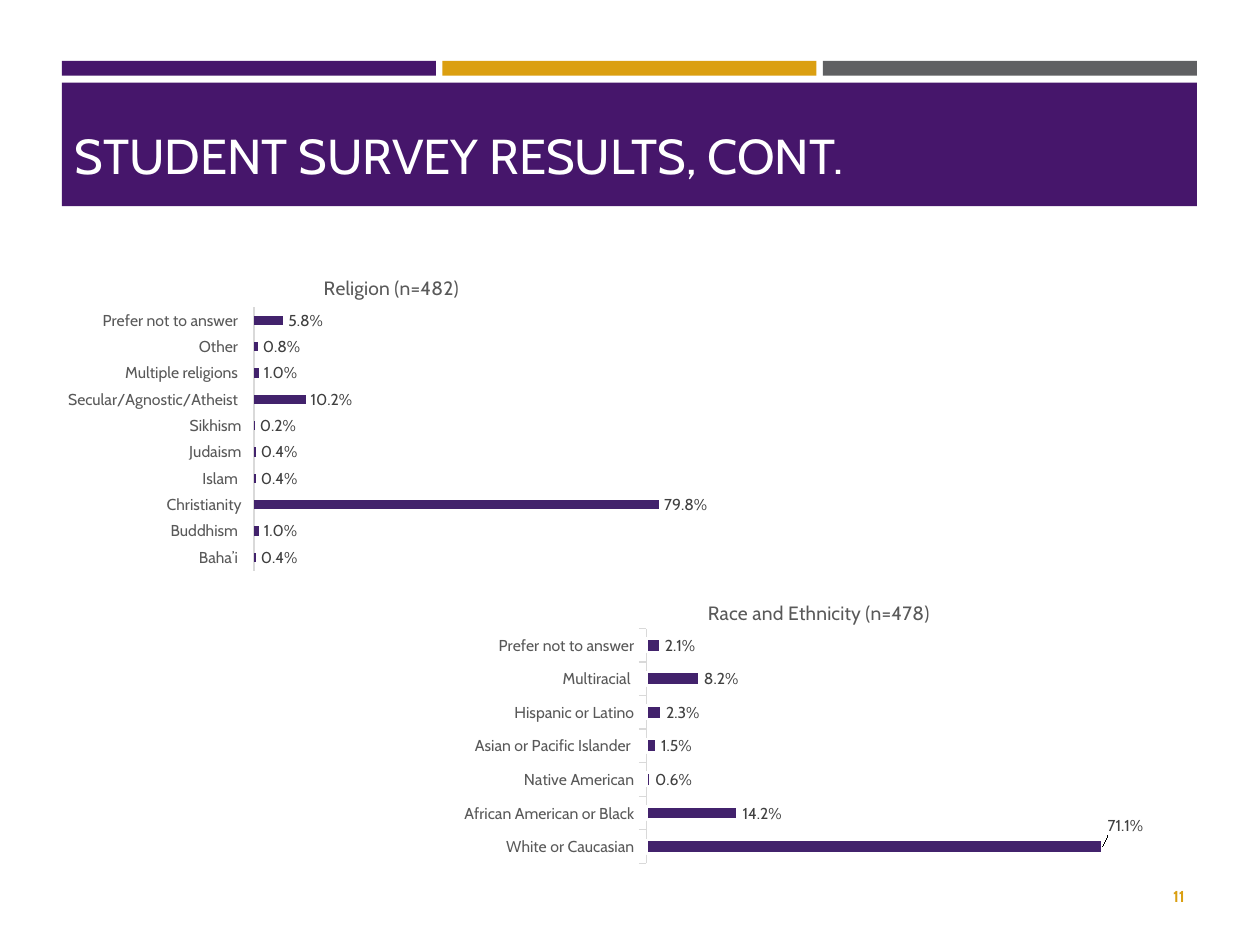
"""Build the student survey slide with its religion and ethnicity charts."""
from dataclasses import dataclass
from lxml.etree import SubElement
from pptx import Presentation
from pptx.chart.data import CategoryChartData
from pptx.dml.color import RGBColor
from pptx.enum.chart import XL_CHART_TYPE, XL_LABEL_POSITION, XL_TICK_LABEL_POSITION, XL_TICK_MARK
from pptx.enum.shapes import MSO_SHAPE
from pptx.enum.text import MSO_ANCHOR, PP_ALIGN
from pptx.oxml.ns import qn
from pptx.util import Pt


@dataclass(frozen=True)
class Theme:
    face: str = "Cabin"
    purple: str = "46166B"
    gold: str = "DB9F11"
    gray: str = "5F6062"
    number: str = "DA9F11"
    bar: str = "42226C"
    axis: str = "D9D9D9"
    text: str = "595959"
    label: str = "404040"
    white: str = "FFFFFF"
    head: int = 28
    title: int = 11
    small: int = 9


theme = Theme()


def style(font, size, color, bold=False):
    font.name, font.size, font.bold = theme.face, Pt(size), bold
    font.color.rgb = RGBColor.from_string(color)


def place(parent, index, **values):
    for old in parent.findall(qn("c:layout")):
        parent.remove(old)
    layout = SubElement(parent, qn("c:layout"))
    parent.insert(index, layout)
    manual = SubElement(layout, qn("c:manualLayout"))
    for key, value in values.items():
        SubElement(manual, qn(f"c:{key}")).set("val", str(value))


deck = Presentation()
deck.slide_width, deck.slide_height = Pt(720), Pt(540)
slide = deck.slides.add_slide(deck.slide_layouts[5])
shapes = slide.shapes

left, wide, gap = 35.4, 648.6, 3.6
part = (wide - 2 * gap) / 3
bands = [(left + i * (part + gap), 34.8, part, 8.4, color)
         for i, color in enumerate((theme.purple, theme.gold, theme.gray))]
bands.append((left, 47.2, wide, 70.6, theme.purple))
for x, y, width, height, color in bands:
    band = shapes.add_shape(MSO_SHAPE.RECTANGLE, Pt(x), Pt(y), Pt(width), Pt(height))
    band.shadow.inherit = False
    band.fill.solid()
    band.fill.fore_color.rgb = RGBColor.from_string(color)
    band.line.fill.background()

title = shapes.title
shapes._spTree.append(title._element)
number = shapes.add_textbox(Pt(614), Pt(497.5), Pt(70), Pt(29))
texts = (
    (title, "STUDENT SURVEY RESULTS, CONT.", theme.head, theme.white,
     False, PP_ALIGN.LEFT, MSO_ANCHOR.BOTTOM),
    (number, "11", theme.small, theme.number, True, PP_ALIGN.RIGHT, MSO_ANCHOR.MIDDLE),
)
title.left, title.top, title.width, title.height = Pt(left), Pt(54), Pt(wide), Pt(54.7)
for box, words, size, color, bold, align, anchor in texts:
    frame = box.text_frame
    frame.text = words
    frame.word_wrap = True
    frame.vertical_anchor = anchor
    line = frame.paragraphs[0]
    line.alignment = align
    style(line.runs[0].font, size, color, bold)

faiths = {
    "Baha’i ": 0.004, "Buddhism ": 0.01, "Christianity": 0.798, "Islam ": 0.004,
    "Judaism": 0.004, "Sikhism": 0.002, "Secular/Agnostic/Atheist ": 0.102,
    "Multiple religions ": 0.01, "Other ": 0.008, "Prefer not to answer ": 0.058,
}
races = {
    "White or Caucasian": 0.711, "African American or Black": 0.142,
    "Native American": 0.006, "Asian or Pacific Islander ": 0.015,
    "Hispanic or Latino": 0.023, "Multiracial ": 0.082, "Prefer not to answer": 0.021,
}
charts = (
    ("Religion (n=482)", faiths, (35.3, 144, 378.7, 185.8), 182, 0.9, XL_TICK_MARK.NONE,
     dict(x=0.39, y=0.06), dict(x=0.29, y=0.17, w=0.69, h=0.81)),
    ("Race and Ethnicity (n=478)", races, (257.8, 329, 413.3, 167.8), 150, 0.8,
     XL_TICK_MARK.OUTSIDE, dict(x=0.35, y=0.07), dict(x=0.27, y=0.18, w=0.71, h=0.8)),
)
for name, shares, box, space, top, tick, spot, area in charts:
    data = CategoryChartData(number_format="0.0%")
    data.categories = list(shares)
    data.add_series("Series 1", list(shares.values()))
    chart = shapes.add_chart(XL_CHART_TYPE.BAR_CLUSTERED, *map(Pt, box), data).chart
    chart.has_legend = False
    style(chart.font, theme.small, theme.text)
    chart.has_title = True
    head = chart.chart_title
    head.text_frame.text = name
    style(head.text_frame.paragraphs[0].runs[0].font, theme.title, theme.text)
    head.include_in_layout = False
    place(head._element, 1, xMode="edge", yMode="edge", **spot)
    place(chart._chartSpace.chart.plotArea, 0, layoutTarget="inner",
          xMode="edge", yMode="edge", **area)

    scale = chart.value_axis
    scale.minimum_scale, scale.maximum_scale = 0, top
    scale.has_major_gridlines = False
    scale.visible = False
    axis = chart.category_axis
    axis.major_tick_mark, axis.minor_tick_mark = tick, XL_TICK_MARK.NONE
    axis.tick_label_position = XL_TICK_LABEL_POSITION.LOW
    axis.format.line.color.rgb = RGBColor.from_string(theme.axis)
    axis.format.line.width = Pt(0.75)
    style(axis.tick_labels.font, theme.small, theme.text)

    plot = chart.plots[0]
    plot.gap_width = space
    plot.vary_by_categories = False
    bars = plot.series[0]
    bars.format.fill.solid()
    bars.format.fill.fore_color.rgb = RGBColor.from_string(theme.bar)
    labels = bars.data_labels
    labels.show_value = True
    labels.number_format, labels.number_format_is_linked = "0.0%", False
    labels.position = XL_LABEL_POSITION.OUTSIDE_END
    style(labels.font, theme.small, theme.label)

bars.format.line.color.rgb = RGBColor.from_string(theme.white)
bars.format.line.width = Pt(1.5)
label = bars.points[0].data_label
style(label.font, theme.small, theme.label)
label.position = XL_LABEL_POSITION.OUTSIDE_END
place(label._get_or_add_dLbl(), 1, x=0, y=-0.07)

deck.save("out.pptx")
